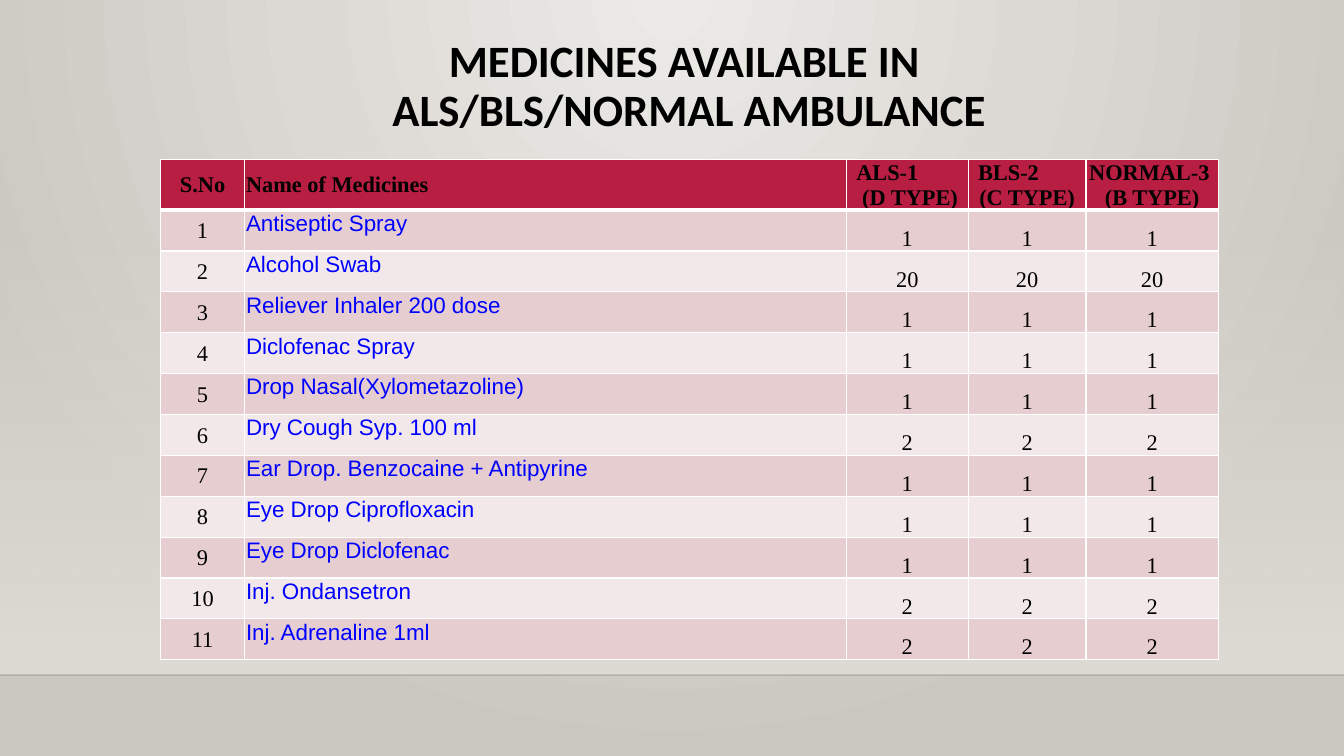
"""Builds the slide listing the medicines carried by each ambulance type."""
from lxml import etree
from pptx import Presentation
from pptx.dml.color import RGBColor
from pptx.enum import shapes, text
from pptx.oxml import ns
from pptx.util import Cm, Pt

BLACK = RGBColor(0x00, 0x00, 0x00)
BLUE = RGBColor(0x00, 0x00, 0xFF)
CRIMSON = RGBColor(0xB7, 0x1E, 0x42)
ROSE = RGBColor(0xE6, 0xCD, 0xCF)
PALE_ROSE = RGBColor(0xF3, 0xE8, 0xE9)
LIGHT_GREY = RGBColor(0xEC, 0xEA, 0xE7)
GREY = RGBColor(0xCA, 0xC7, 0xC1)
WALL = RGBColor(0xDF, 0xDB, 0xD5)
EDGE = RGBColor(0x00, 0x00, 0x01)

MIDDLE, TOP, BOTTOM = (text.MSO_ANCHOR.MIDDLE, text.MSO_ANCHOR.TOP,
                       text.MSO_ANCHOR.BOTTOM)
CENTER, LEFT = text.PP_ALIGN.CENTER, text.PP_ALIGN.LEFT

HEADINGS = ["S.No", "Name of Medicines", "ALS-1\n (D TYPE)",
            "BLS-2\n(C TYPE)", "NORMAL-3 \n(B TYPE)"]
MEDICINES = [
    ("Antiseptic Spray", 1),
    ("Alcohol Swab", 20),
    ("Reliever Inhaler 200 dose", 1),
    ("Diclofenac Spray", 1),
    ("Drop Nasal(Xylometazoline)", 1),
    ("Dry Cough Syp. 100 ml", 2),
    ("Ear Drop. Benzocaine + Antipyrine", 1),
    ("Eye Drop Ciprofloxacin", 1),
    ("Eye Drop Diclofenac", 1),
    ("Inj. Ondansetron", 2),
    ("Inj. Adrenaline 1ml", 2),
]
COLUMN_WIDTHS = [2.13, 15.16, 3.07, 2.97, 3.33]
HEADER_HEIGHT, ROW_HEIGHT = 1.26, 1.03


def add_element(parent, tag, **attributes):
    return etree.SubElement(parent, ns.qn(tag), attributes)


def set_gradient(fill, first, last):
    fill.gradient()
    for stop, color in zip(fill.gradient_stops, (first, last)):
        stop.color.rgb = color


deck = Presentation()
deck.slide_width, deck.slide_height = Cm(33.87), Cm(19.05)
page = deck.slides.add_slide(deck.slide_layouts[5])

set_gradient(page.background.fill, LIGHT_GREY, GREY)
linear = next(page.element.iter(ns.qn("a:lin")))
gradient = linear.getparent()
gradient.remove(linear)
circle = add_element(gradient, "a:path", path="circle")
add_element(circle, "a:fillToRect", l="43000", t="0", r="43000", b="100000")

wall = page.shapes.add_shape(shapes.MSO_SHAPE.RECTANGLE, Cm(0), Cm(5.61),
                             Cm(33.87), Cm(11.4))
wall.shadow.inherit = False
wall.line.fill.background()
set_gradient(wall.fill, WALL, WALL)
wall.fill.gradient_angle = 270
clear_color = next(wall.element.iter(ns.qn("a:srgbClr")))
add_element(clear_color, "a:alpha", val="0")

floor_edge = page.shapes.add_connector(shapes.MSO_CONNECTOR.STRAIGHT, Cm(0),
                                       Cm(17.01), Cm(33.87), Cm(17.01))
floor_edge.line.color.rgb = EDGE
floor_edge.line.width = Pt(1)
add_element(next(floor_edge.element.iter(ns.qn("a:srgbClr"))), "a:alpha", val="20000")
add_element(floor_edge.element.spPr, "a:effectLst")

title = page.shapes.title
title.left, title.top, title.width, title.height = Cm(4.04), Cm(0.74), Cm(26.67), Cm(2.92)
frame = title.text_frame
frame.text = "MEDICINES AVAILABLE IN \vALS/BLS/NORMAL AMBULANCE"
frame.word_wrap = True
frame.auto_size = text.MSO_AUTO_SIZE.NONE
frame.vertical_anchor = MIDDLE
heading = frame.paragraphs[0]
heading.alignment = CENTER
heading.line_spacing = 0.9
for span in heading.runs:
    for name, value in dict(name="Calibri", size=Pt(32), bold=True).items():
        setattr(span.font, name, value)
    span.font.color.rgb = BLACK

rows = [HEADINGS] + [[str(number), medicine, *[str(count)] * 3]
                     for number, (medicine, count) in enumerate(MEDICINES, 1)]
table = page.shapes.add_table(
    len(rows), len(HEADINGS), Cm(4.04), Cm(4.01), Cm(sum(COLUMN_WIDTHS)),
    Cm(HEADER_HEIGHT + ROW_HEIGHT * len(MEDICINES))).table
for column, width in zip(table.columns, COLUMN_WIDTHS):
    column.width = Cm(width)

for r, values in enumerate(rows):
    header = r == 0
    table.rows[r].height = Cm(HEADER_HEIGHT if header else ROW_HEIGHT)
    for c, value in enumerate(values):
        cell = table.cell(r, c)
        cell.text = value
        if header:
            anchor = BOTTOM if c == 4 else MIDDLE
        else:
            anchor = (MIDDLE, TOP, BOTTOM, BOTTOM, BOTTOM)[c]
        layout = dict(vertical_anchor=anchor, margin_left=Cm(0.03),
                      margin_right=Cm(0.03), margin_top=Cm(0.03), margin_bottom=Cm(0))
        for name, setting in layout.items():
            setattr(cell, name, setting)
        cell.fill.solid()
        cell.fill.fore_color.rgb = CRIMSON if header else (PALE_ROSE, ROSE)[r % 2]

        medicine_name = c == 1 and not header
        style = dict(name="Arial" if medicine_name else "Times New Roman",
                     size=Pt(16), bold=header)
        for para in cell.text_frame.paragraphs:
            para.alignment = LEFT if c == 1 else CENTER
            for name, setting in style.items():
                setattr(para.runs[0].font, name, setting)
            para.runs[0].font.color.rgb = BLUE if medicine_name else BLACK
        if header and c in (2, 3):
            type_line = cell.text_frame.paragraphs[0]
            type_line.alignment = LEFT
            type_line._p.get_or_add_pPr().set("marL", str(Cm(0.22)))

        properties = cell._tc.get_or_add_tcPr()
        for place, side in enumerate(("a:lnL", "a:lnR", "a:lnT", "a:lnB")):
            thick = (r, side) in ((0, "a:lnB"), (1, "a:lnT"))
            border = add_element(properties, side, w=str(Pt(3 if thick else 1)))
            add_element(add_element(border, "a:solidFill"), "a:srgbClr", val="FFFFFF")
            properties.insert(place, border)

deck.save("out.pptx")
